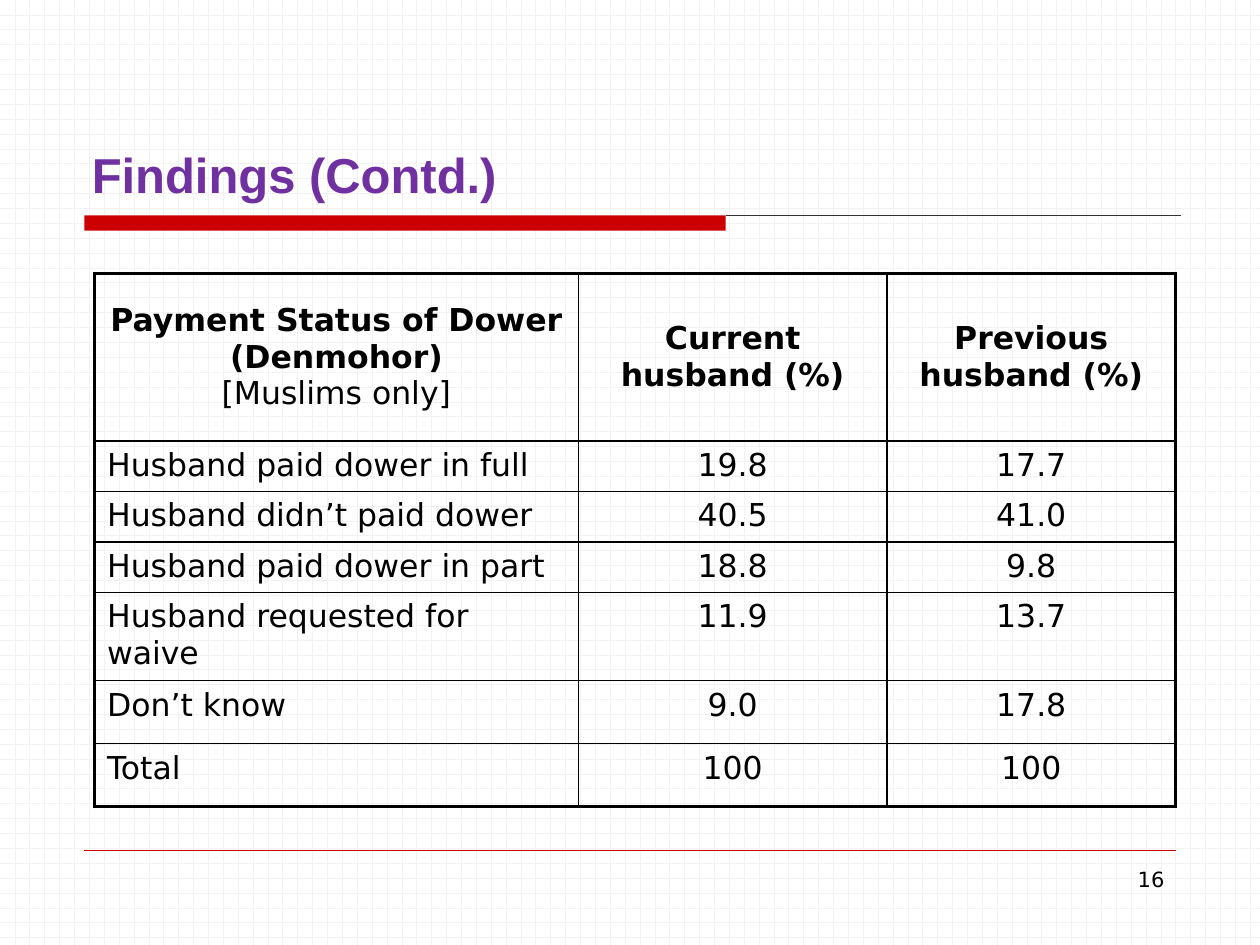
import pptx
import pptx.util
import pptx.dml.color
import pptx.enum.dml
import pptx.enum.shapes
import pptx.enum.text
import pptx.oxml
import pptx.oxml.ns
import lxml.etree

Inches = pptx.util.Inches
Pt = pptx.util.Pt
ANCHOR = pptx.enum.text.MSO_ANCHOR
ALIGN = pptx.enum.text.PP_ALIGN
COLORS = {"red": "CC0000", "purple": "7030A0", "black": "000000",
          "rule": "333333", "grid": "F2F2F2", "white": "FFFFFF"}
HEADERS = [
    [("Payment Status of Dower (Denmohor)", True), ("[Muslims only]", False)],
    [("Current husband (%)", True)],
    [("Previous husband (%)", True)],
]
RESULTS = [
    ("Husband paid dower in full", "19.8", "17.7"),
    ("Husband didn’t paid dower", "40.5", "41.0"),
    ("Husband paid dower in part", "18.8", "9.8"),
    ("Husband requested for waive", "11.9", "13.7"),
    ("Don’t know", "9.0", "17.8"),
    ("Total", "100", "100"),
]
COLUMN_WIDTHS = [3.84, 2.45, 2.29]
ROW_HEIGHTS = [1.33, 0.4, 0.4, 0.4, 0.7, 0.5, 0.5]


def color(name):
    return pptx.dml.color.RGBColor.from_string(COLORS[name])


class SlideBuilder:
    font = "DejaVu Sans"

    def __init__(self, page):
        self.page = page

    def background(self):
        fill = self.page.background.fill
        fill.patterned()
        fill.pattern = pptx.enum.dml.MSO_PATTERN.HORIZONTAL_BRICK
        fill.fore_color.rgb = color("grid")
        fill.back_color.rgb = color("white")

    def bar(self, left, top, width, height, fill):
        box = self.page.shapes.add_shape(
            pptx.enum.shapes.MSO_SHAPE.RECTANGLE,
            Inches(left), Inches(top), Inches(width), Inches(height))
        box.shadow.inherit = False
        box.fill.solid()
        box.fill.fore_color.rgb = color(fill)
        box.line.fill.background()

    def rule(self, left, right, top, stroke, weight):
        line = self.page.shapes.add_connector(
            pptx.enum.shapes.MSO_CONNECTOR.STRAIGHT,
            Inches(left), Inches(top), Inches(right), Inches(top))
        line.line.color.rgb = color(stroke)
        line.line.width = Pt(weight)
        properties = line._element.spPr
        lxml.etree.SubElement(properties, pptx.oxml.ns.qn("a:effectLst"))

    def style(self, para, size, align, bold=False, fill="black", font=None):
        para.alignment = align
        para.font.name = font or self.font
        para.font.size = Pt(size)
        para.font.bold = bold
        para.font.color.rgb = color(fill)

    def text(self, words, left, top, width, height, size,
             align=ALIGN.LEFT, anchor=ANCHOR.TOP, **look):
        box = self.page.shapes.add_textbox(
            Inches(left), Inches(top), Inches(width), Inches(height))
        frame = box.text_frame
        frame.word_wrap = True
        frame.vertical_anchor = anchor
        frame.text = words
        self.style(frame.paragraphs[0], size, align, **look)

    def borders(self, cell, weights):
        properties = cell._tc.get_or_add_tcPr()
        for index, (side, weight) in enumerate(weights.items()):
            border = pptx.oxml.parse_xml(
                f'<a:{side} {pptx.oxml.ns.nsdecls("a")} w="{Pt(weight)}">'
                f'<a:solidFill><a:srgbClr val="{COLORS["black"]}"/></a:solidFill>'
                f'</a:{side}>')
            properties.insert(index, border)

    def table(self, left, top, widths, heights, rows, size):
        frame = self.page.shapes.add_table(
            len(heights), len(widths), Inches(left), Inches(top),
            Inches(sum(widths)), Inches(sum(heights)))
        table = frame.table
        table.first_row = False
        table.horz_banding = False
        for column, width in zip(table.columns, widths):
            column.width = Inches(width)
        for row, height in zip(table.rows, heights):
            row.height = Inches(height)
        last_row, last_column = len(heights) - 1, len(widths) - 1
        for r, row in enumerate(rows):
            for c, lines in enumerate(row):
                cell = table.cell(r, c)
                cell.fill.background()
                cell.vertical_anchor = ANCHOR.MIDDLE if r == 0 else ANCHOR.TOP
                cell.text = "\n".join(words for words, bold in lines)
                align = ALIGN.LEFT if r and c == 0 else ALIGN.CENTER
                for para, (words, bold) in zip(cell.text_frame.paragraphs, lines):
                    self.style(para, size, align, bold)
                self.borders(cell, {
                    "lnL": 2.25 if c == 0 else 1,
                    "lnR": 2.25 if c == last_column else 1,
                    "lnT": 2.25 if r == 0 else 1,
                    "lnB": 2.25 if r == last_row else 1,
                })


def main():
    deck = pptx.Presentation()
    deck.slide_width = Inches(10)
    deck.slide_height = Inches(7.5)
    slide = SlideBuilder(deck.slides.add_slide(deck.slide_layouts[6]))
    slide.background()
    slide.bar(0.67, 1.71, 5.09, 0.12, "red")
    slide.rule(5.76, 9.37, 1.71, "rule", 0.75)
    slide.rule(0.67, 9.33, 6.75, "red", 0.25)
    slide.text("Findings (Contd.)", 0.63, 1.09, 8.75, 0.57, 28,
               anchor=ANCHOR.BOTTOM, bold=True, fill="purple", font="Arial")
    body = [[[(words, False)] for words in row] for row in RESULTS]
    slide.table(0.75, 2.17, COLUMN_WIDTHS, ROW_HEIGHTS, [HEADERS] + body, 18)
    slide.text("16", 7.17, 6.83, 2.17, 0.52, 12, align=ALIGN.RIGHT)
    deck.save("out.pptx")


if __name__ == "__main__":
    main()
